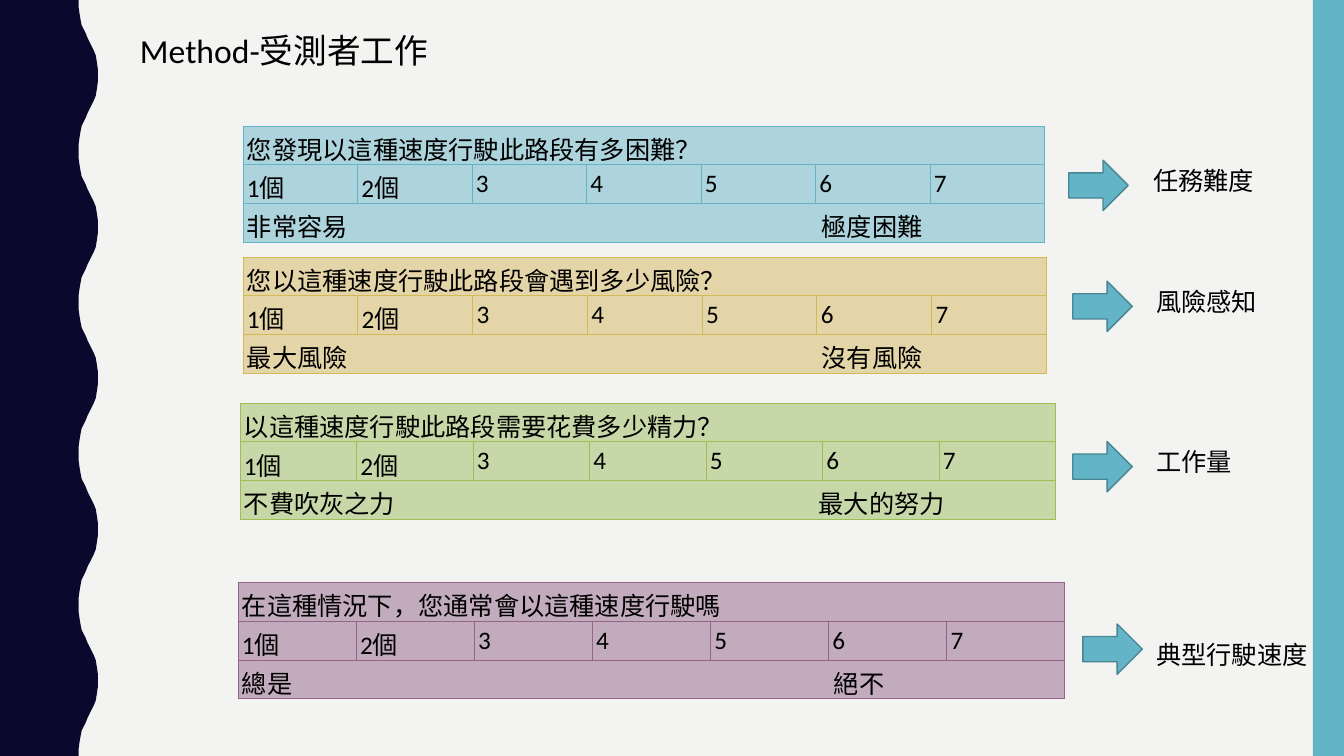
from lxml.etree import SubElement
from pptx import Presentation
from pptx.dml.color import RGBColor
from pptx.enum.shapes import MSO_SHAPE
from pptx.enum.text import MSO_ANCHOR
from pptx.oxml import parse_xml
from pptx.oxml.ns import nsdecls, qn
from pptx.util import Inches, Pt


def color(code):
    return RGBColor.from_string(code)


def write(frame, text, size=18, inset=None, tab=None):
    frame.word_wrap = True
    if inset is not None:
        frame.margin_left = frame.margin_right = Inches(inset)
        frame.margin_top = frame.margin_bottom = Inches(inset)
    para = frame.paragraphs[0]
    if tab:
        stops = SubElement(para._p.get_or_add_pPr(), qn("a:tabLst"))
        SubElement(stops, qn("a:tab"), pos=str(Inches(tab)), algn="l")
    run = para.add_run()
    run.text = text
    run.font.name = "Calibri"
    run.font.size = Pt(size)
    run.font.color.rgb = color("000000")


class Page:
    teal = "62B4C6"
    edge = "498592"
    navy = "0B082E"
    paper = "F3F3F2"

    def __init__(self, slide):
        self.slide = slide
        fill = slide.background.fill
        fill.solid()
        fill.fore_color.rgb = color(self.paper)

    def paint(self, shape, fill, line=None):
        shape.shadow.inherit = False
        shape.fill.solid()
        shape.fill.fore_color.rgb = color(fill)
        if line:
            shape.line.color.rgb = color(line)
            shape.line.width = Pt(1)
        else:
            shape.line.fill.background()

    def shape(self, kind, left, top, width, height, fill, line=None):
        box = map(Inches, (left, top, width, height))
        self.paint(self.slide.shapes.add_shape(kind, *box), fill, line)

    def wave(self, half, period, count):
        cycle = half + [(x, period - y) for x, y in half[-2::-1]]
        points = [(x, y + period * turn) for turn in range(count) for x, y in cycle]
        points.append((0, period * count))
        build = self.slide.shapes.build_freeform(0, 0)
        build.add_line_segments([(Inches(x), Inches(y)) for x, y in points])
        self.paint(build.convert_to_shape(), self.navy)

    def text(self, text, left, top, width, height, **style):
        box = map(Inches, (left, top, width, height))
        write(self.slide.shapes.add_textbox(*box).text_frame, text, **style)

    def cell(self, cell, fill, line):
        cell.fill.solid()
        cell.fill.fore_color.rgb = color(fill)
        cell.vertical_anchor = MSO_ANCHOR.MIDDLE
        cell.margin_left = cell.margin_right = Inches(0.04)
        cell.margin_top = cell.margin_bottom = Inches(0.04)
        props = cell._tc.get_or_add_tcPr()
        for place, side in enumerate("LRTB"):
            props.insert(place, parse_xml(
                f'<a:ln{side} {nsdecls("a")} w="{Pt(0.5)}"><a:solidFill>'
                f'<a:srgbClr val="{line}"/></a:solidFill></a:ln{side}>'))

    def scale(self, left, top, width, fill, line, ask, low, high, tab):
        box = map(Inches, (left, top, width, 1.15))
        table = self.slide.shapes.add_table(3, 7, *box).table
        table.first_row = table.horz_banding = False
        for col in table.columns:
            col.width = Inches(width / 7)
        for row in table.rows:
            row.height = Inches(1.15 / 3)
        for cell in table.iter_cells():
            self.cell(cell, fill, line)
        for row in (0, 2):
            table.cell(row, 0).merge(table.cell(row, 6))
        write(table.cell(0, 0).text_frame, ask, inset=0.04)
        for col, mark in enumerate(("1個", "2個", *"34567")):
            write(table.cell(1, col).text_frame, mark, inset=0.04)
        write(table.cell(2, 0).text_frame, f"{low}\t{high}", inset=0.04, tab=tab)


HALF = [(0.78, 0), (0.78, 0.07), (0.79, 0.14), (0.8, 0.2), (0.81, 0.25),
        (0.83, 0.29), (0.85, 0.33), (0.87, 0.38), (0.89, 0.42), (0.91, 0.46),
        (0.93, 0.5), (0.95, 0.55), (0.96, 0.61), (0.97, 0.68), (0.97, 0.75)]

SCALES = [
    (2.41, 1.25, 7.95, "ADD3DC", "62B4C6",
     "您發現以這種速度行駛此路段有多困難？", "非常容易", "極度困難", 5.7),
    (2.41, 2.55, 7.97, "E4D5A8", "D3BA55",
     "您以這種速度行駛此路段會遇到多少風險？", "最大風險", "沒有風險", 5.7),
    (2.38, 4, 8.09, "C7D8A8", "9EBE55",
     "以這種速度行駛此路段需要花費多少精力？", "不費吹灰之力", "最大的努力", 5.7),
    (2.36, 5.78, 8.2, "C2ABBC", "96648A",
     "在這種情況下，您通常會以這種速度行駛嗎", "總是", "絕不", 5.87),
]

LABELS = [
    (10.6, 1.59, "任務難度", 11.34, 1.59, 1.37),
    (10.64, 2.79, "風險感知", 11.37, 2.79, 1.37),
    (10.64, 4.38, "工作量", 11.37, 4.38, 1.37),
    (10.74, 6.19, "典型行駛速度", 11.37, 6.29, 1.77),
]


def main():
    deck = Presentation()
    deck.slide_width = Inches(13.33)
    deck.slide_height = Inches(7.5)
    page = Page(deck.slides.add_slide(deck.slide_layouts[6]))
    page.wave(HALF, 1.5, 5)
    page.shape(MSO_SHAPE.RECTANGLE, 13.02, 0, 0.31, 7.5, page.teal)
    page.text("Method-受測者工作", 1.29, 0.25, 3.06, 0.5, size=24)
    for scale in SCALES:
        page.scale(*scale)
    for x, y, label, left, top, width in LABELS:
        page.shape(MSO_SHAPE.RIGHT_ARROW, x, y, 0.59, 0.5, page.teal, page.edge)
        page.text(label, left, top, width, 0.4)
    deck.save("out.pptx")


if __name__ == "__main__":
    main()
